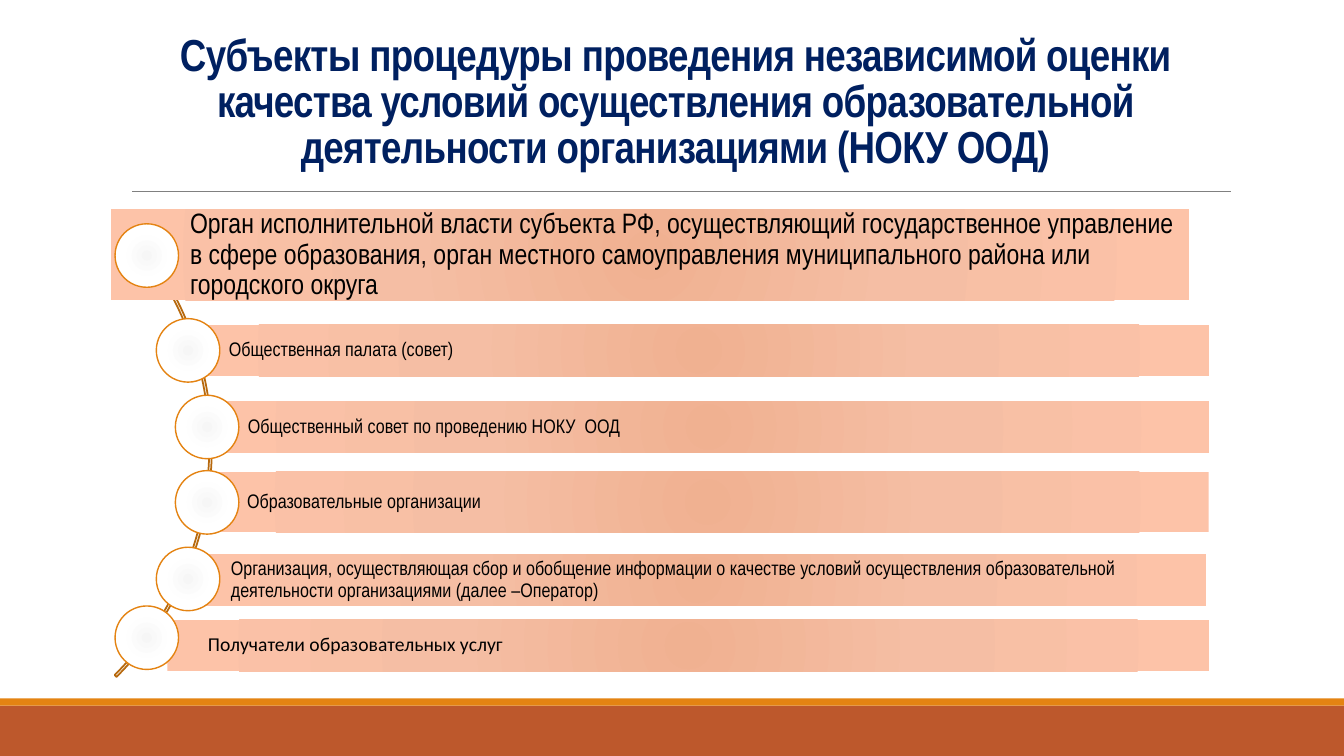
from dataclasses import dataclass

from lxml import etree
from pptx import Presentation
from pptx import util as u
from pptx.dml.color import RGBColor
from pptx.enum import shapes, text
from pptx.oxml import ns

COLORS = {
    "title": "002060",
    "text": "000000",
    "footer": "BD582C",
    "stripe": "E48312",
    "rule": "808080",
    "arc": "B7690E",
}
BAR_STOPS = ((0, "F0B191"), (45, "F5BEA4"), (100, "FDC3A8"))
CIRCLE_STOPS = ((0, "F6F6F6"), (45, "FEFEFE"), (100, "FFFFFF"))
CIRCLE_SIZE = 1.6
NARROW = "Arial Narrow"


@dataclass(frozen=True)
class Subject:
    label: str
    left: float
    top: float
    width: float
    circle_left: float
    circle_top: float
    height: float = 1.3
    size: int = 14
    font: str = NARROW
    indent: float = 1.02
    margin: float = 0.1


SUBJECTS = (
    Subject("Орган исполнительной власти субъекта РФ, осуществляющий государственное "
            "управление в сфере образования, орган местного самоуправления "
            "муниципального района или городского округа",
            2.79, 5.28, 27.18, 2.9, 5.64, height=2.29, size=20, indent=2, margin=0.15),
    Subject("Общественная палата (совет)", 4.75, 8.18, 25.73, 3.94, 8.03),
    Subject("Общественный совет по проведению НОКУ  ООД", 5.23, 10.11, 25.25, 4.42, 9.96),
    Subject("Образовательные организации", 5.21, 11.89, 25.25, 4.42, 11.86, height=1.52),
    Subject("Организация, осуществляющая сбор и обобщение информации о качестве "
            "условий осуществления образовательной деятельности организациями "
            "(далее –Оператор)", 4.8, 13.97, 25.6, 3.94, 13.79),
    Subject("Получатели образовательных услуг", 4.22, 15.62, 26.26, 2.9, 15.27,
            font="Calibri"),
)


def rgb(name: str) -> RGBColor:
    return RGBColor.from_string(COLORS[name])


def add_plain(slide, kind, left: float, top: float, width: float, height: float):
    shape = slide.shapes.add_shape(kind, u.Cm(left), u.Cm(top), u.Cm(width), u.Cm(height))
    shape.shadow.inherit = False
    shape.line.fill.background()
    return shape


def fill_radial(shape, stops: tuple) -> None:
    gradient = etree.Element(ns.qn("a:gradFill"), rotWithShape="1")
    stop_list = etree.SubElement(gradient, ns.qn("a:gsLst"))
    for position, color in stops:
        stop = etree.SubElement(stop_list, ns.qn("a:gs"), pos=str(position * 1000))
        etree.SubElement(stop, ns.qn("a:srgbClr"), val=color)
    circle = etree.SubElement(gradient, ns.qn("a:path"), {"path": "circle"})
    etree.SubElement(circle, ns.qn("a:fillToRect"), dict.fromkeys("ltrb", "100000"))
    shape._element.spPr.find(ns.qn("a:prstGeom")).addnext(gradient)


def style_paragraph(paragraph, size: int, font: str, color: str, spacing: float) -> None:
    paragraph.line_spacing = spacing
    paragraph.font.size = u.Pt(size)
    paragraph.font.name = font
    paragraph.font.color.rgb = rgb(color)


def add_band(slide, top: float, height: float, color: str) -> None:
    band = add_plain(slide, shapes.MSO_SHAPE.RECTANGLE, 0, top, 33.87, height)
    band.fill.solid()
    band.fill.fore_color.rgb = rgb(color)


def add_rule(slide) -> None:
    rule = slide.shapes.add_connector(
        shapes.MSO_CONNECTOR.STRAIGHT, u.Cm(3.33), u.Cm(4.83), u.Cm(31.01), u.Cm(4.83))
    rule.line.color.rgb = rgb("rule")
    rule.line.width = u.Pt(0.5)
    etree.SubElement(rule._element.spPr, ns.qn("a:effectLst"))


def add_title(slide) -> None:
    title = slide.shapes.title
    title.left, title.top = u.Cm(3.05), u.Cm(0.79)
    title.width, title.height = u.Cm(27.94), u.Cm(3.66)
    frame = title.text_frame
    frame.text = ("Субъекты процедуры проведения независимой оценки качества условий "
                  "осуществления образовательной деятельности организациями (НОКУ ООД)")
    frame.auto_size = text.MSO_AUTO_SIZE.NONE
    frame.vertical_anchor = text.MSO_ANCHOR.MIDDLE
    heading = frame.paragraphs[0]
    heading.alignment = text.PP_ALIGN.CENTER
    style_paragraph(heading, 32, NARROW, "title", 0.85)
    heading.font.bold = True
    heading._p.pPr.find(ns.qn("a:defRPr")).set("spc", "-50")


def add_arc(slide) -> None:
    arc = add_plain(slide, shapes.MSO_SHAPE.BLOCK_ARC, -11.07, 3.05, 16.41, 16.41)
    for index, value in enumerate((189, 27, 0.004)):
        arc.adjustments[index] = value
    arc.fill.background()
    arc.line.color.rgb = rgb("arc")
    arc.line.width = u.Pt(1.25)


def add_subject(slide, subject: Subject) -> None:
    bar = add_plain(slide, shapes.MSO_SHAPE.RECTANGLE,
                    subject.left, subject.top, subject.width, subject.height)
    fill_radial(bar, BAR_STOPS)
    frame = bar.text_frame
    frame.text = subject.label
    frame.word_wrap = True
    frame.vertical_anchor = text.MSO_ANCHOR.MIDDLE
    frame.margin_left = u.Cm(subject.indent)
    frame.margin_top = frame.margin_right = frame.margin_bottom = u.Cm(subject.margin)
    label = frame.paragraphs[0]
    label.alignment = text.PP_ALIGN.LEFT
    style_paragraph(label, subject.size, subject.font, "text", 0.9)

    circle = add_plain(slide, shapes.MSO_SHAPE.OVAL, subject.circle_left,
                       subject.circle_top, CIRCLE_SIZE, CIRCLE_SIZE)
    fill_radial(circle, CIRCLE_STOPS)
    circle.line.color.rgb = rgb("stripe")
    circle.line.width = u.Pt(1)


def main() -> None:
    presentation = Presentation()
    presentation.slide_width, presentation.slide_height = u.Cm(33.87), u.Cm(19.05)
    slide = presentation.slides.add_slide(presentation.slide_layouts[5])
    add_band(slide, 17.78, 1.27, "footer")
    add_band(slide, 17.6, 0.18, "stripe")
    add_rule(slide)
    add_title(slide)
    add_arc(slide)
    for subject in SUBJECTS:
        add_subject(slide, subject)
    presentation.save("out.pptx")


if __name__ == "__main__":
    main()
